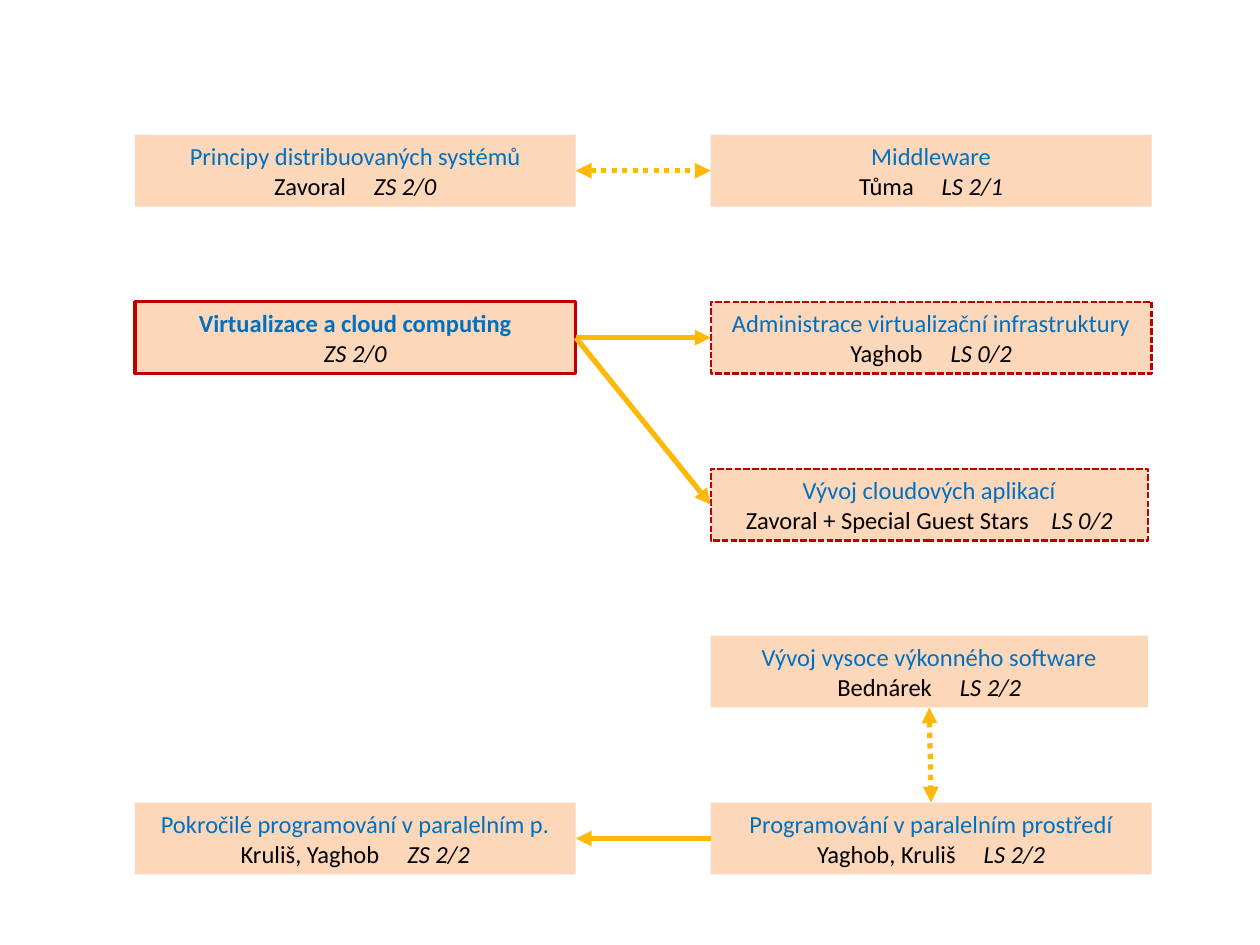
from pptx import Presentation
from pptx.dml.color import RGBColor
from pptx.enum.dml import MSO_LINE
from pptx.enum.shapes import MSO_CONNECTOR, MSO_SHAPE
from pptx.enum.text import MSO_ANCHOR, PP_ALIGN
from pptx.oxml.ns import qn
from pptx.util import Inches, Pt
from lxml import etree

RECTANGLE = MSO_SHAPE.RECTANGLE
STRAIGHT = MSO_CONNECTOR.STRAIGHT
DASH, DOT = MSO_LINE.SQUARE_DOT, MSO_LINE.ROUND_DOT
SYS_DASH = "sysDash"
CENTER, MIDDLE = PP_ALIGN.CENTER, MSO_ANCHOR.MIDDLE
TOP, LEFT, BOTTOM, RIGHT = range(4)

COLUMNS = [1.07, 5.64]
FIRST_ROW, ROW_STEP, BOX_HEIGHT = 1.07, 1.325, 0.57
WIDE, NARROW = 3.5, 3.47
GAP, SMALL_GAP = 12.7, 9.5


def color(value):
    return RGBColor.from_string(value)


def add_text(para, text, fill="000000", bold=False, italic=False, spacing=0):
    span = para.add_run()
    span.text = text
    span.font.name = "Calibri"
    span.font.size = Pt(14)
    span.font.bold = bold
    span.font.italic = italic
    span.font.color.rgb = color(fill)
    if spacing:
        span.font._element.set("spc", str(round(spacing * 100)))


deck = Presentation()
deck.slide_width, deck.slide_height = Inches(10), Inches(7.5)
page = deck.slides.add_slide(deck.slide_layouts[6])

courses = [
    ("principles", 0, 0, WIDE, "Principy distribuovaných systémů", "Zavoral", "ZS 2/0", GAP, None),
    ("middleware", 1, 0, WIDE, "Middleware", "Tůma", "LS 2/1", GAP, None),
    ("cloud", 0, 1, WIDE, "Virtualizace a cloud computing", "", "ZS 2/0", GAP, "solid"),
    ("admin", 1, 1, WIDE, "Administrace virtualizační infrastruktury", "Yaghob", "LS 0/2", GAP, SYS_DASH),
    ("apps", 1, 2, NARROW, "Vývoj cloudových aplikací", "Zavoral + Special Guest Stars", "LS 0/2", SMALL_GAP, SYS_DASH),
    ("performance", 1, 3, NARROW, "Vývoj vysoce výkonného software", "Bednárek", "LS 2/2", GAP, None),
    ("advanced", 0, 4, WIDE, "Pokročilé programování v paralelním p.", "Kruliš, Yaghob", "ZS 2/2", GAP, None),
    ("parallel", 1, 4, WIDE, "Programování v paralelním prostředí", "Yaghob, Kruliš", "LS 2/2", GAP, None),
]

boxes = {}
for key, column, row, width, title, teacher, term, gap, border in courses:
    box = page.shapes.add_shape(
        RECTANGLE, Inches(COLUMNS[column]), Inches(FIRST_ROW + row * ROW_STEP),
        Inches(width), Inches(BOX_HEIGHT))
    box.shadow.inherit = False
    box.fill.solid()
    box.fill.fore_color.rgb = color("FDD7BA")
    if border:
        box.line.color.rgb = color("C00000")
        box.line.width = Pt(2 if border == "solid" else 1.25)
        if border == SYS_DASH:
            box.line.dash_style = DASH
            box.line._ln.find(qn("a:prstDash")).set("val", SYS_DASH)
    else:
        box.line.fill.background()

    frame = box.text_frame
    frame.word_wrap = True
    frame.vertical_anchor = MIDDLE
    heading, details = frame.paragraphs[0], frame.add_paragraph()
    heading.alignment = details.alignment = CENTER
    add_text(heading, title, fill="0070C0", bold=border == "solid")
    if teacher:
        add_text(details, teacher)
        add_text(details, " ", spacing=gap)
    add_text(details, term, italic=True)
    boxes[key] = box

links = [
    ("cloud", RIGHT, "admin", LEFT, False),
    ("cloud", RIGHT, "apps", LEFT, False),
    ("parallel", LEFT, "advanced", RIGHT, False),
    ("principles", RIGHT, "middleware", LEFT, True),
    ("performance", BOTTOM, "parallel", TOP, True),
]

for start, start_side, end, end_side, mutual in links:
    link = page.shapes.add_connector(STRAIGHT, 0, 0, 0, 0)
    link.begin_connect(boxes[start], start_side)
    link.end_connect(boxes[end], end_side)
    link.line.color.rgb = color("FEB80A")
    link.line.width = Pt(3)
    if mutual:
        link.line.dash_style = DOT
        link.line._ln.find(qn("a:prstDash")).set("val", "sysDot")
        etree.SubElement(link.line._ln, qn("a:headEnd"), type="triangle")
    etree.SubElement(link.line._ln, qn("a:tailEnd"), type="triangle")
    etree.SubElement(link._element.spPr, qn("a:effectLst"))

deck.save("out.pptx")
